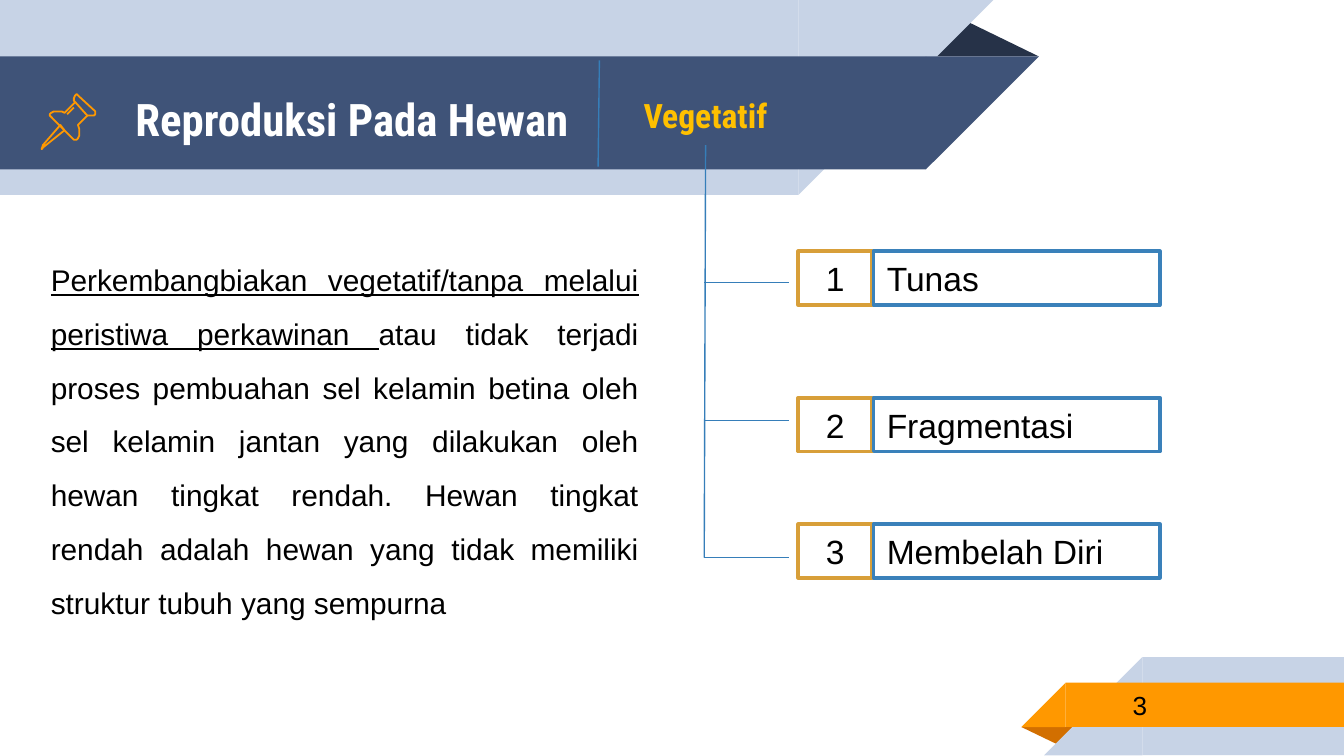
from lxml.etree import SubElement
from pptx import Presentation
from pptx.dml.color import RGBColor
from pptx.enum.shapes import MSO_CONNECTOR, MSO_SHAPE
from pptx.enum.text import MSO_ANCHOR, PP_ALIGN
from pptx.oxml.ns import qn
from pptx.util import Pt

PX = 9144
WHITE = RGBColor(0xFF, 0xFF, 0xFF)
BLACK = RGBColor(0x00, 0x00, 0x00)
PALE_BLUE = RGBColor(0xC7, 0xD3, 0xE6)
NAVY = RGBColor(0x3F, 0x53, 0x78)
DARK_NAVY = RGBColor(0x26, 0x32, 0x48)
ORANGE = RGBColor(0xFF, 0x98, 0x00)
DARK_ORANGE = RGBColor(0xD2, 0x6F, 0x00)
GOLD = RGBColor(0xFF, 0xC0, 0x00)
NUMBER_BORDER = RGBColor(0xD8, 0x9F, 0x39)
LABEL_BORDER = RGBColor(0x3A, 0x81, 0xBA)
BRANCH_BLUE = RGBColor(0x36, 0x7E, 0xB9)

BODY_FONT = "Arial"
HEADING_FONT = "Roboto Condensed"

PIN_NEEDLE = [(45, 93), (32, 108), (31, 111), (33, 109), (48, 97)]
PIN_HEAD = [(56, 76), (65, 86), (68, 86), (70, 86), (71, 85), (71, 83),
            (58, 71), (57, 70), (56, 71), (55, 73), (55, 75)]
PIN_BODY = [(56, 76), (48, 84), (46, 83), (43, 83), (40, 83), (38, 84),
            (37, 85), (37, 86), (55, 104), (56, 104), (57, 104), (58, 103),
            (59, 101), (59, 99), (59, 96), (58, 93), (65, 86)]
PIN_SHINE = [(50, 85), (55, 80)]

METHODS = [("Tunas", 187, 210), ("Fragmentasi", 296, 313), ("Membelah Diri", 390, 415)]


def add_block(slide, preset, box, fill, border=None):
    block = slide.shapes.add_shape(preset, *(length * PX for length in box))
    block.shadow.inherit = False
    block.fill.solid()
    block.fill.fore_color.rgb = fill
    if border is None:
        block.line.fill.background()
    else:
        block.line.color.rgb = border
        block.line.width = Pt(2)
    return block


def add_fold(slide, box, fill, rotation=0):
    fold = add_block(slide, MSO_SHAPE.ISOSCELES_TRIANGLE, box, fill)
    fold.adjustments[0] = 0.324
    fold.rotation = rotation


def add_band(slide, straight, slope, fill, rotation=0):
    for preset, box in ((MSO_SHAPE.RECTANGLE, straight), (MSO_SHAPE.RIGHT_TRIANGLE, slope)):
        part = add_block(slide, preset, box, fill)
        part.rotation = rotation
        part.element.spPr.find(qn("a:xfrm")).set("flipH", "1")


def style(paragraph, size, color, font=BODY_FONT, bold=False, align=PP_ALIGN.LEFT):
    paragraph.alignment = align
    paragraph.font.name = font
    paragraph.font.size = Pt(size)
    paragraph.font.bold = bold
    paragraph.font.color.rgb = color


def add_text(slide, box, text, size, color, font=BODY_FONT, bold=False, anchor=MSO_ANCHOR.MIDDLE):
    frame = slide.shapes.add_textbox(*(length * PX for length in box)).text_frame
    frame.word_wrap = True
    frame.vertical_anchor = anchor
    frame.margin_left = frame.margin_right = frame.margin_top = frame.margin_bottom = 10 * PX
    frame.text = text
    style(frame.paragraphs[0], size, color, font, bold)


def add_box(slide, box, text, border, align):
    frame = add_block(slide, MSO_SHAPE.RECTANGLE, box, WHITE, border).text_frame
    frame.text = text
    style(frame.paragraphs[0], 18, BLACK, align=align)


def add_line(slide, *ends):
    line = slide.shapes.add_connector(MSO_CONNECTOR.STRAIGHT, *(length * PX for length in ends))
    line.line.color.rgb = BRANCH_BLUE
    line.line.width = Pt(0.75)
    SubElement(line.element.spPr, qn("a:effectLst"))


def add_stroke(slide, points, close=False):
    builder = slide.shapes.build_freeform(*points[0], scale=PX)
    builder.add_line_segments(points[1:], close=close)
    stroke = builder.convert_to_shape()
    stroke.shadow.inherit = False
    stroke.fill.background()
    stroke.line.color.rgb = ORANGE
    stroke.line.width = Pt(0.96)


def add_explanation(slide):
    frame = add_block(slide, MSO_SHAPE.RECTANGLE, (28, 175, 457, 293), WHITE).text_frame
    frame.word_wrap = True
    paragraph = frame.paragraphs[0]
    style(paragraph, 16, BLACK, align=PP_ALIGN.JUSTIFY)
    paragraph.line_spacing = 1.5
    definition = paragraph.add_run()
    definition.text = "Perkembangbiakan vegetatif/tanpa melalui peristiwa perkawinan "
    definition.font.underline = True
    paragraph.add_run().text = (
        "atau tidak terjadi proses pembuahan sel kelamin betina oleh sel kelamin jantan "
        "yang dilakukan oleh hewan tingkat rendah. Hewan tingkat rendah adalah hewan "
        "yang tidak memiliki struktur tubuh yang sempurna"
    )


def add_header(slide):
    add_fold(slide, (688, 14, 85, 28), DARK_NAVY)
    add_band(slide, (0, 0, 594, 145), (594, 0, 145, 145), PALE_BLUE, 180)
    add_band(slide, (0, 42, 689, 84), (689, 42, 84, 84), NAVY, 180)
    add_text(slide, (91, 46, 630, 84), "Reproduksi Pada Hewan", 24, WHITE, HEADING_FONT, True)
    add_stroke(slide, PIN_NEEDLE, close=True)
    add_stroke(slide, PIN_HEAD, close=True)
    add_stroke(slide, PIN_BODY)
    add_stroke(slide, PIN_SHINE)
    add_text(slide, (469, 61, 220, 63), "Vegetatif", 18, GOLD, HEADING_FONT, True, MSO_ANCHOR.TOP)
    add_line(slide, 446, 45, 445, 124)


def add_footer(slide):
    add_fold(slide, (760, 541, 43, 14), DARK_ORANGE, 180)
    add_band(slide, (850, 489, 150, 73), (777, 489, 73, 73), PALE_BLUE)
    add_band(slide, (793, 508, 207, 33), (760, 508, 33, 33), ORANGE)
    add_text(slide, (833, 507, 163, 35), "3", 14, BLACK)


def add_methods(slide):
    add_line(slide, 525, 108, 524, 415)
    for number, (method, top, branch) in enumerate(METHODS, start=1):
        add_box(slide, (594, top, 55, 40), str(number), NUMBER_BORDER, PP_ALIGN.CENTER)
        add_box(slide, (650, top, 213, 40), method, LABEL_BORDER, PP_ALIGN.LEFT)
        add_line(slide, 524, branch, 587, branch)


def main():
    presentation = Presentation()
    presentation.slide_width = 1000 * PX
    presentation.slide_height = presentation.slide_width * 9 // 16
    slide = presentation.slides.add_slide(presentation.slide_layouts[6])
    add_header(slide)
    add_footer(slide)
    add_explanation(slide)
    add_methods(slide)
    presentation.save("out.pptx")


if __name__ == "__main__":
    main()
